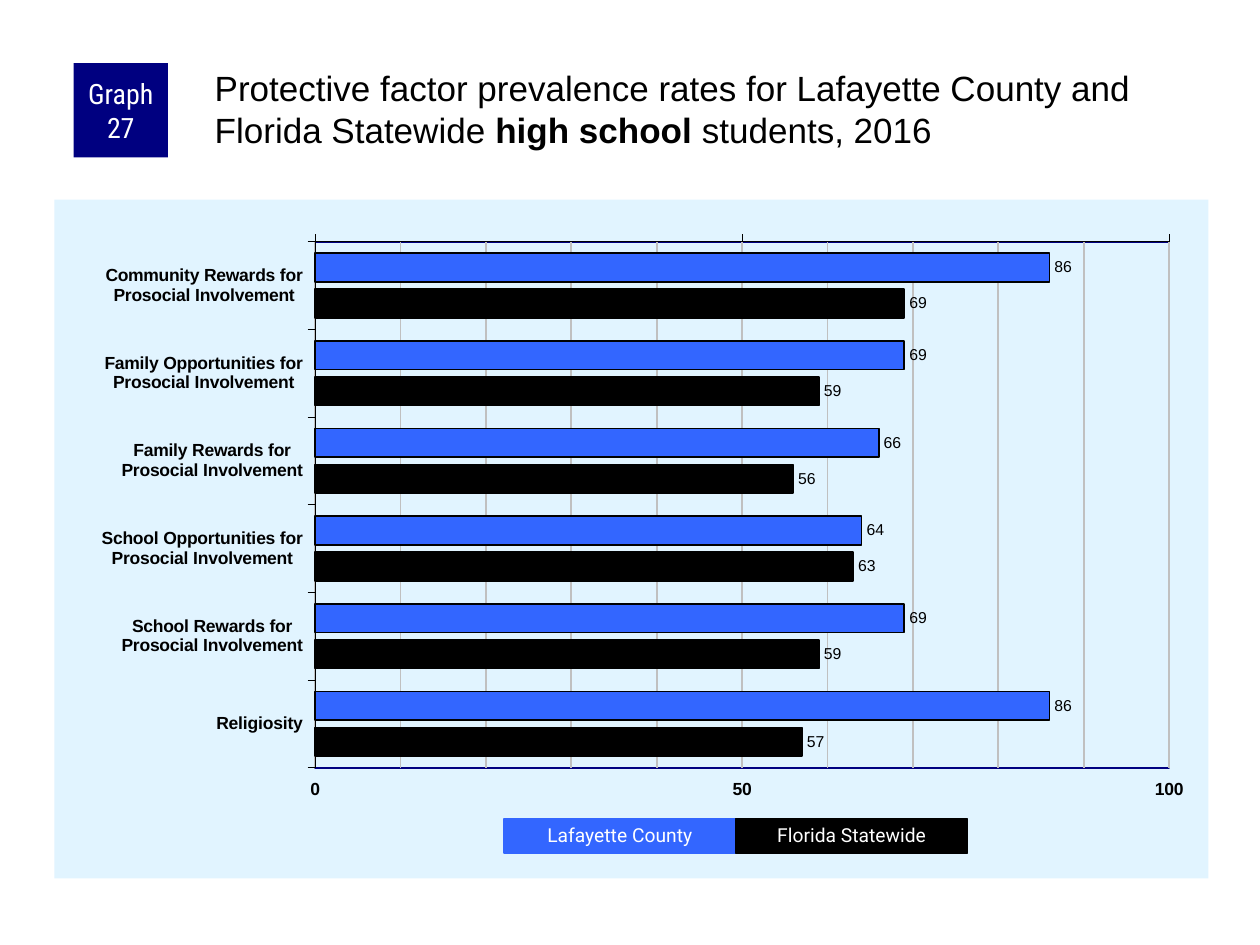
from lxml.etree import fromstring
from pptx import Presentation
from pptx.chart.data import CategoryChartData
from pptx.dml.color import RGBColor
from pptx.enum.chart import XL_CHART_TYPE, XL_LABEL_POSITION, XL_TICK_LABEL_POSITION, XL_TICK_MARK
from pptx.enum.shapes import MSO_SHAPE
from pptx.enum.text import MSO_ANCHOR, PP_ALIGN
from pptx.util import Pt

COLORS = {
    "badge": "000080",
    "panel": "E1F4FF",
    "county": "3366FF",
    "state": "000000",
    "grid": "C0C0C0",
    "ink": "000000",
    "light": "FFFFFF",
}
NAMESPACES = (
    'xmlns:c="http://schemas.openxmlformats.org/drawingml/2006/chart" '
    'xmlns:a="http://schemas.openxmlformats.org/drawingml/2006/main"'
)
FACTORS = [
    "Community Rewards for\nProsocial Involvement",
    "Family Opportunities for\nProsocial Involvement",
    "Family Rewards for\nProsocial Involvement",
    "School Opportunities for\nProsocial Involvement",
    "School Rewards for\nProsocial Involvement",
    "Religiosity",
]
GROUPS = [
    ("Lafayette County", "county", (86, 69, 66, 64, 69, 86)),
    ("Florida Statewide", "state", (69, 59, 56, 63, 59, 57)),
]
PLOT = {"x": 0.226, "y": 0.062, "w": 0.74, "h": 0.775}


def color(name):
    return RGBColor.from_string(COLORS[name])


def set_font(font, face, size, ink, bold=False):
    font.name = face
    font.size = Pt(size)
    font.color.rgb = color(ink)
    font.bold = bold


def set_line(line, name, width):
    line.color.rgb = color(name)
    line.width = Pt(width)


def chart_part(body):
    return fromstring(body.replace(">", f" {NAMESPACES}>", 1))


def shape_properties(fill=None, line=None):
    def paint(name):
        if name is None:
            return "<a:noFill/>"
        return f'<a:solidFill><a:srgbClr val="{COLORS[name]}"/></a:solidFill>'

    return chart_part(f'<c:spPr>{paint(fill)}<a:ln w="{Pt(1)}">{paint(line)}</a:ln></c:spPr>')


def plot_layout():
    edges = "".join(f'<c:{key}Mode val="edge"/>' for key in "xy")
    sizes = "".join(f'<c:{key} val="{value}"/>' for key, value in PLOT.items())
    return chart_part(
        f'<c:layout><c:manualLayout><c:layoutTarget val="inner"/>{edges}{sizes}'
        "</c:manualLayout></c:layout>"
    )


def add_label_block(page, box, text, face, size, fill):
    block = page.shapes.add_shape(MSO_SHAPE.RECTANGLE, *map(Pt, box))
    block.shadow.inherit = False
    block.fill.solid()
    block.fill.fore_color.rgb = color(fill)
    block.line.fill.background()
    frame = block.text_frame
    frame.word_wrap = True
    frame.vertical_anchor = MSO_ANCHOR.MIDDLE
    frame.margin_left = frame.margin_right = Pt(3.6)
    frame.margin_top = frame.margin_bottom = 0
    para = frame.paragraphs[0]
    para.text = text
    para.alignment = PP_ALIGN.CENTER
    set_font(para.font, face, size, "light")
    return block


def add_header(page, box):
    left, top, width, height = box
    badge = 54
    add_label_block(page, (left, top, badge, badge), "Graph 27", "Roboto Condensed", 16, "badge")
    indent = 78.5
    title = page.shapes.add_textbox(*map(Pt, (left + indent, top, width - indent, height)))
    frame = title.text_frame
    frame.word_wrap = True
    frame.margin_left = frame.margin_top = Pt(2.2)
    frame.margin_right = frame.margin_bottom = 0
    para = frame.paragraphs[0]
    set_font(para.font, "Arial", 20, "ink")
    for text, bold in (
        ("Protective factor prevalence rates for Lafayette County and Florida Statewide ", False),
        ("high school ", True),
        ("students, 2016", False),
    ):
        span = para.add_run()
        span.text = text
        span.font.bold = bold


def style_axes(chart):
    for axis in (chart.category_axis, chart.value_axis):
        axis.major_tick_mark = XL_TICK_MARK.OUTSIDE
        axis.minor_tick_mark = XL_TICK_MARK.NONE
        set_font(axis.tick_labels.font, "Arial", 10, "ink", True)
        set_line(axis.format.line, "ink", 0.25)
    chart.category_axis.reverse_order = True
    values = chart.value_axis
    values.minimum_scale, values.maximum_scale = 0, 100
    values.major_unit, values.minor_unit = 50, 10
    values.tick_label_position = XL_TICK_LABEL_POSITION.HIGH
    values.has_major_gridlines = values.has_minor_gridlines = True
    set_line(values.major_gridlines.format.line, "grid", 1)
    chart.element.xpath(".//c:minorGridlines")[0].append(shape_properties(line="grid"))


def add_rates_chart(page, box):
    data = CategoryChartData()
    data.categories = FACTORS
    for name, _, rates in GROUPS:
        data.add_series(name, rates)
    chart = page.shapes.add_chart(XL_CHART_TYPE.BAR_CLUSTERED, *map(Pt, box), data).chart
    chart.has_legend = False
    chart.has_title = False
    set_font(chart.font, "Arial", 11.8, "ink")
    style_axes(chart)
    plot = chart.plots[0]
    plot.gap_width, plot.overlap = 80, -25
    plot.vary_by_categories = False
    for series, (_, fill, _) in zip(plot.series, GROUPS):
        series.format.fill.solid()
        series.format.fill.fore_color.rgb = color(fill)
        set_line(series.format.line, "ink", 1)
        labels = series.data_labels
        labels.show_value = True
        labels.position = XL_LABEL_POSITION.OUTSIDE_END
        set_font(labels.font, "Arial", 9, "ink")
    area = chart.element.xpath("c:chart/c:plotArea")[0]
    for layout in area.xpath("c:layout"):
        area.remove(layout)
    area.insert(0, plot_layout())
    area.append(shape_properties(line="badge"))
    chart.element.xpath("c:chart")[0].addnext(shape_properties(fill="panel"))


def add_legend(page, box):
    left, top, width, height = box
    share = width / len(GROUPS)
    for index, (name, fill, _) in enumerate(GROUPS):
        cell = (left + index * share, top, share, height)
        block = add_label_block(page, cell, name, "Roboto", 11, fill)
        set_line(block.line, fill, 0.75)
        block.text_frame.paragraphs[0].line_spacing = 0.9


def main():
    deck = Presentation()
    deck.slide_width, deck.slide_height = Pt(720), Pt(540)
    page = deck.slides.add_slide(deck.slide_layouts[6])
    add_rates_chart(page, (31, 114, 659.5, 388))
    add_header(page, (42, 36, 648.5, 60))
    add_legend(page, (288, 468, 265, 19.5))
    deck.save("out.pptx")


if __name__ == "__main__":
    main()
